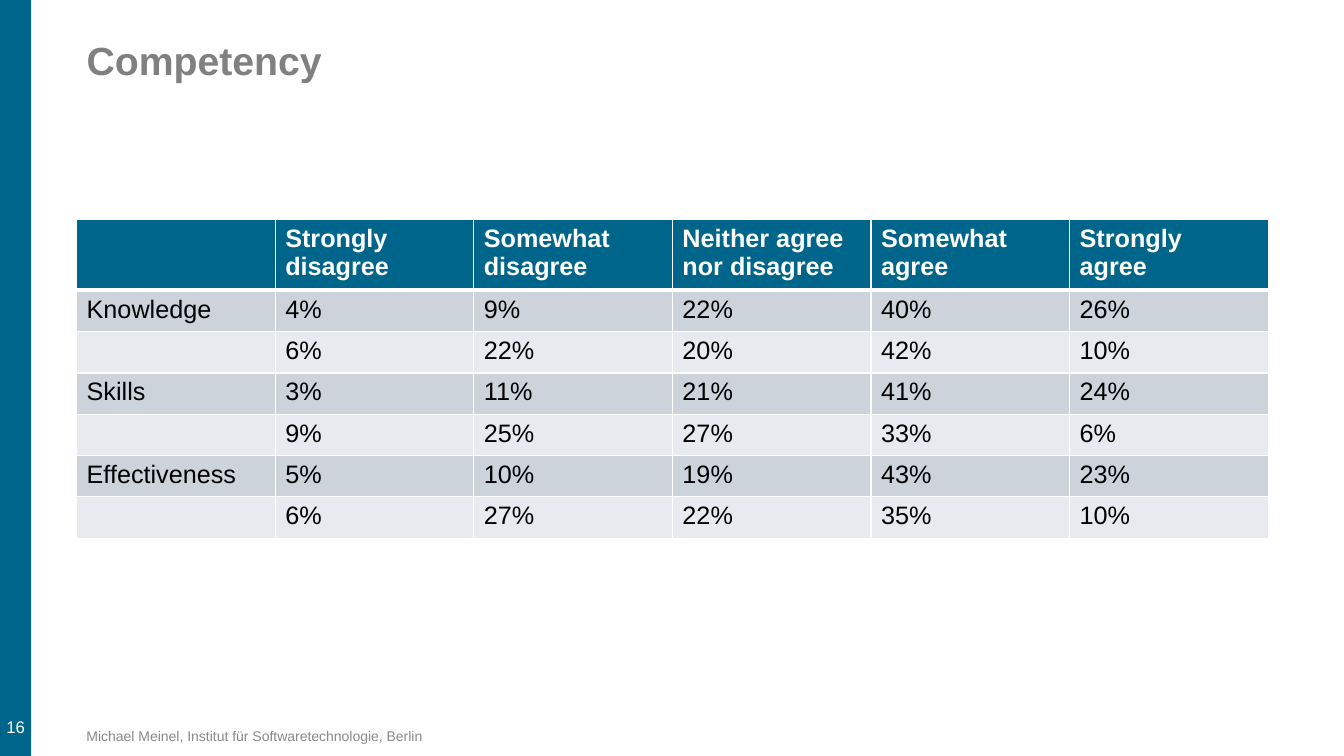
from lxml import etree
from pptx import Presentation
from pptx.dml.color import RGBColor
from pptx.enum.text import MSO_ANCHOR, MSO_AUTO_SIZE, PP_ALIGN
from pptx.enum.shapes import MSO_SHAPE
from pptx.oxml.ns import qn
from pptx.util import Inches, Pt

TITLE = "Competency"
FOOTER = "Michael Meinel, Institut für Softwaretechnologie, Berlin"
PAGE_NUMBER = "16"
# "\n" starts a paragraph, "\v" breaks a line inside one
ANSWERS = ["", "Strongly disagree", "Somewhat disagree",
           "Neither agree nor disagree", "Somewhat\nagree", "Strongly\vagree"]
RESULTS = [
    ("Knowledge", 4, 9, 22, 40, 26),
    ("", 6, 22, 20, 42, 10),
    ("Skills", 3, 11, 21, 41, 24),
    ("", 9, 25, 27, 33, 6),
    ("Effectiveness", 5, 10, 19, 43, 23),
    ("", 6, 27, 22, 35, 10),
]

TEAL = RGBColor(0x00, 0x65, 0x8B)
BAND_DARK = RGBColor(0xCC, 0xD3, 0xDA)
BAND_LIGHT = RGBColor(0xE7, 0xEA, 0xEE)
TITLE_GRAY = RGBColor(0x80, 0x80, 0x80)
FOOTER_GRAY = RGBColor(0x89, 0x89, 0x89)
WHITE = RGBColor(0xFF, 0xFF, 0xFF)
BLACK = RGBColor(0x00, 0x00, 0x00)

TOP, MIDDLE, BOTTOM = MSO_ANCHOR.TOP, MSO_ANCHOR.MIDDLE, MSO_ANCHOR.BOTTOM
LEFT, CENTER = PP_ALIGN.LEFT, PP_ALIGN.CENTER
RECTANGLE = MSO_SHAPE.RECTANGLE
NO_AUTOFIT = MSO_AUTO_SIZE.NONE
TITLE_ONLY = 5

SLIDE_W, SLIDE_H = 13.33, 7.5
SIDEBAR_W = 0.31
MARGIN = 0.76
COLUMN_W, HEADER_H, ROW_H = 1.97, 0.65, 0.41
TABLE_TOP = 2.18


def write(frame, text, size, color, bold=False, align=LEFT, spacing=None):
    frame.text = text
    for paragraph in frame.paragraphs:
        paragraph.alignment = align
        paragraph.line_spacing = spacing
        font = paragraph.font
        font.name, font.size, font.bold = "Arial", Pt(size), bold
        font.color.rgb = color


def add_label(slide, box, text, size, color, anchor, align=LEFT, wrap=True):
    label = slide.shapes.add_textbox(*map(Inches, box))
    frame = label.text_frame
    frame.word_wrap, frame.vertical_anchor = wrap, anchor
    write(frame, text, size, color, align=align)
    return frame


def add_borders(cell, top=1, bottom=1):
    """Draw white cell edges; widths in points."""
    properties = cell._tc.get_or_add_tcPr()
    edges = (("L", 1), ("R", 1), ("T", top), ("B", bottom))
    for position, (side, width) in enumerate(edges):
        line = etree.Element(qn(f"a:ln{side}"), w=str(Pt(width)))
        fill = etree.SubElement(line, qn("a:solidFill"))
        etree.SubElement(fill, qn("a:srgbClr"), val=str(WHITE))
        properties.insert(position, line)


def add_sidebar(slide):
    bar = slide.shapes.add_shape(RECTANGLE, 0, 0, Inches(SIDEBAR_W), Inches(SLIDE_H))
    bar.shadow.inherit = False
    bar.fill.solid()
    bar.fill.fore_color.rgb = TEAL
    bar.line.fill.background()
    number = add_label(slide, (0, 5.84, SIDEBAR_W, 1.57), PAGE_NUMBER, 12, WHITE,
                       BOTTOM, align=CENTER, wrap=False)
    number.margin_left = number.margin_right = Inches(0.04)
    number.margin_top = number.margin_bottom = Inches(0.1)


def set_title(slide):
    title = slide.shapes.title
    title.left, title.top, title.width, title.height = map(Inches, (MARGIN, 0.36, 11, 1.08))
    frame = title.text_frame
    frame.auto_size, frame.vertical_anchor = NO_AUTOFIT, TOP
    write(frame, TITLE, 28, TITLE_GRAY, bold=True, spacing=0.9)


def add_results_table(slide):
    rows = [ANSWERS] + [(topic, *(f"{share}%" for share in shares))
                        for topic, *shares in RESULTS]
    heights = [HEADER_H] + [ROW_H] * len(RESULTS)
    table = slide.shapes.add_table(
        len(rows), len(ANSWERS), Inches(MARGIN), Inches(TABLE_TOP),
        Inches(COLUMN_W * len(ANSWERS)), Inches(sum(heights))).table
    for column in table.columns:
        column.width = Inches(COLUMN_W)
    for r, (texts, height) in enumerate(zip(rows, heights)):
        table.rows[r].height = Inches(height)
        header = r == 0
        band = TEAL if header else BAND_DARK if r % 2 else BAND_LIGHT
        for c, text in enumerate(texts):
            cell = table.cell(r, c)
            cell.fill.solid()
            cell.fill.fore_color.rgb = band
            write(cell.text_frame, text, 18, WHITE if header else BLACK, bold=header)
            add_borders(cell, top=3 if r == 1 else 1, bottom=3 if header else 1)


def main():
    deck = Presentation()
    deck.slide_width, deck.slide_height = Inches(SLIDE_W), Inches(SLIDE_H)
    slide = deck.slides.add_slide(deck.slide_layouts[TITLE_ONLY])
    add_sidebar(slide)
    add_label(slide, (MARGIN, 7.16, 4.5, 0.28), FOOTER, 10, FOOTER_GRAY, MIDDLE)
    set_title(slide)
    add_results_table(slide)
    deck.save("out.pptx")


if __name__ == "__main__":
    main()
